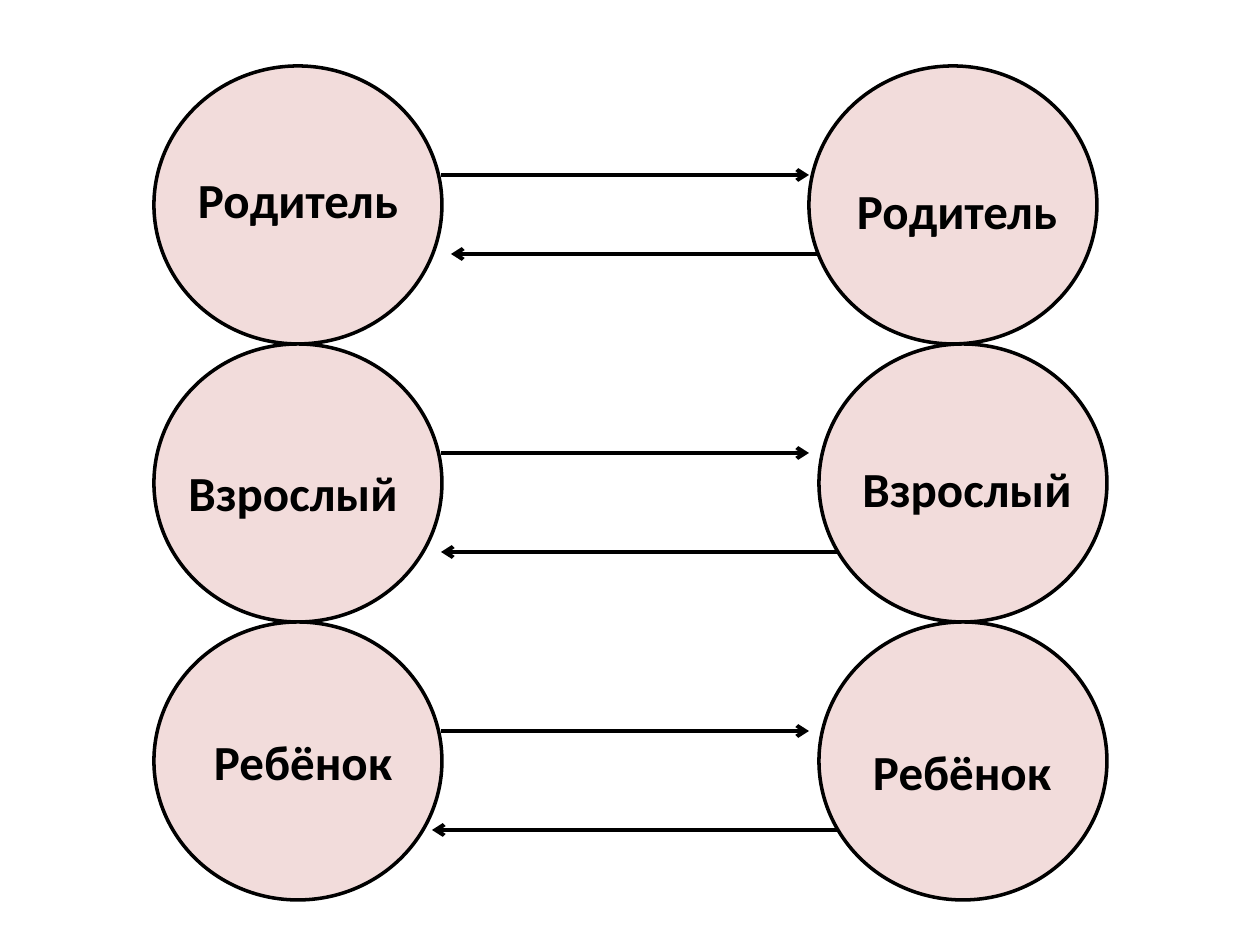
import pptx
import pptx.util
import pptx.dml.color
import pptx.enum.shapes
import pptx.enum.text
import pptx.oxml.ns
import lxml.etree

RGB = pptx.dml.color.RGBColor
WHITE = RGB(0xFF, 0xFF, 0xFF)
BLACK = RGB(0, 0, 0)
PINK = RGB(0xF2, 0xDC, 0xDB)

SCALE = 914400 / 126
WIDTH, HEIGHT = 1260, 945
LEFT, TOP, STEP = 154, 66, 278
WIDE, HIGH = 288, 278
AHEAD = 175

KIND = pptx.enum.shapes.MSO_SHAPE
FONT = {
    "name": "Calibri",
    "size": pptx.util.Pt(28),
    "bold": True,
}

RIGHTS = [809, 819, 819]
BACKS = [(819, 451, 254), (838, 441, 552), (838, 432, 830)]
LABELS = [
    ("Родитель", (184, 175, 228, 49), 6),
    ("Взрослый", (174, 473, 238, 39), 6),
    ("Ребёнок", (184, 731, 238, 59), 6),
    ("Родитель", (838, 175, 238, 69), 6),
    ("Взрослый", (848, 453, 238, 69), 6),
    ("Ребёнок", (838, 731, 248, 59), 27),
]


def px(num):
    return pptx.util.Emu(round(num * SCALE))


def add_shape(slide, kind, box, fill, line):
    shape = slide.shapes.add_shape(kind, *map(px, box))
    shape.shadow.inherit = False
    shape.fill.solid()
    shape.fill.fore_color.rgb = fill
    shape.line.color.rgb = line
    shape.line.width = pptx.util.Pt(2)
    return shape


def add_arrow(slide, start, end, y):
    kind = pptx.enum.shapes.MSO_CONNECTOR.STRAIGHT
    arrow = slide.shapes.add_connector(kind, *map(px, (start, y, end, y)))
    arrow.line.color.rgb = BLACK
    arrow.line.width = pptx.util.Pt(2.25)
    qn = pptx.oxml.ns.qn
    props = arrow._element.spPr
    tail = lxml.etree.SubElement(props.find(qn("a:ln")), qn("a:tailEnd"))
    tail.set("type", "arrow")
    lxml.etree.SubElement(props, qn("a:effectLst"))


def add_label(slide, text, box, inset):
    frame = add_shape(slide, KIND.RECTANGLE, box, PINK, PINK).text_frame
    frame.word_wrap = True
    frame.vertical_anchor = pptx.enum.text.MSO_ANCHOR.MIDDLE
    frame.margin_top = px(inset)
    para = frame.paragraphs[0]
    para.alignment = pptx.enum.text.PP_ALIGN.CENTER
    run = para.add_run()
    run.text = text
    for key, value in FONT.items():
        setattr(run.font, key, value)
    run.font.color.rgb = BLACK


def main():
    deck = pptx.Presentation()
    deck.slide_width, deck.slide_height = px(WIDTH), px(HEIGHT)
    slide = deck.slides.add_slide(deck.slide_layouts[6])
    add_shape(slide, KIND.RECTANGLE, (0, 0, WIDTH, HEIGHT), WHITE, WHITE)
    for column in ([LEFT] * 3, RIGHTS):
        for row, x in enumerate(column):
            box = (x, TOP + row * STEP, WIDE, HIGH)
            add_shape(slide, KIND.OVAL, box, PINK, BLACK)
    for row, back in enumerate(BACKS):
        add_arrow(slide, LEFT + WIDE - 1, RIGHTS[0], AHEAD + row * STEP)
        add_arrow(slide, *back)
    for label in LABELS:
        add_label(slide, *label)
    deck.save("out.pptx")


if __name__ == "__main__":
    main()
